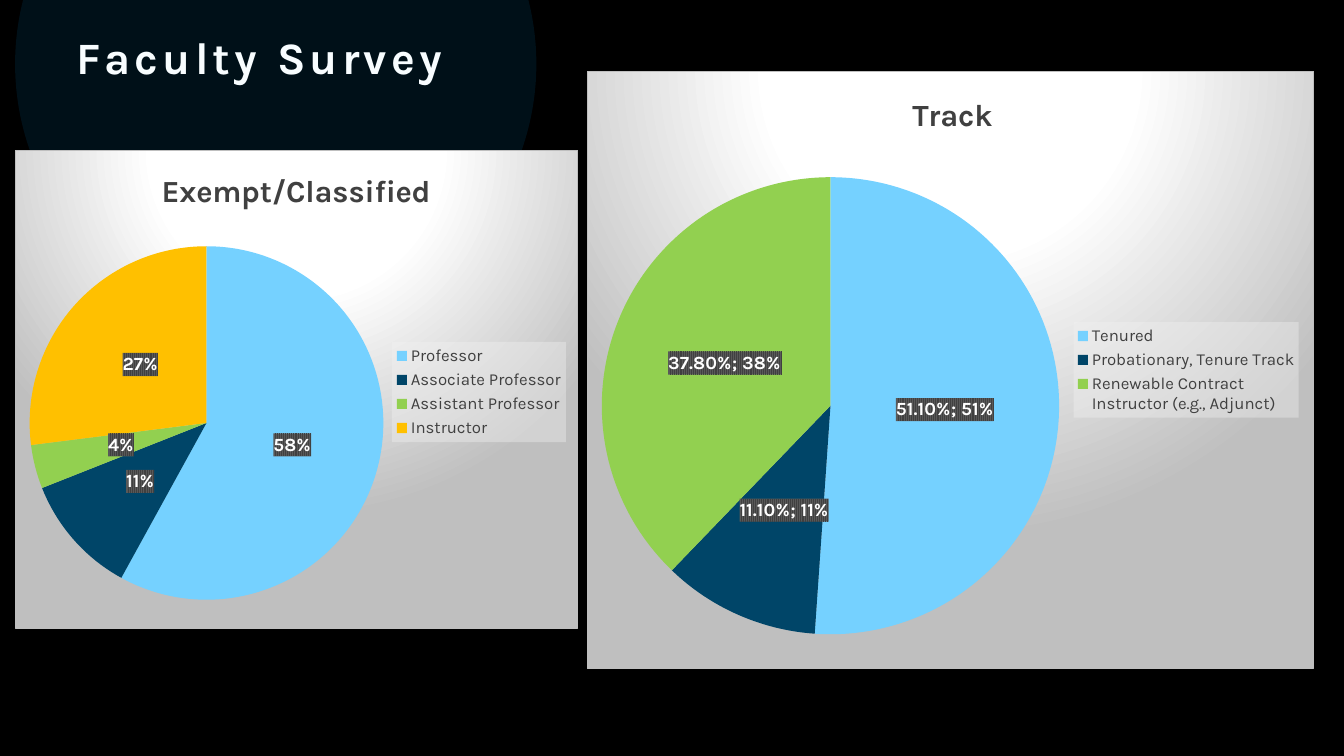
"""Build the Faculty Survey slide with two pie charts."""
from lxml import etree
from pptx import Presentation
from pptx.chart.data import CategoryChartData
from pptx.dml.color import RGBColor
from pptx.enum.chart import XL_CHART_TYPE, XL_LABEL_POSITION, XL_LEGEND_POSITION
from pptx.enum.shapes import MSO_SHAPE
from pptx.enum.text import PP_ALIGN
from pptx.oxml import parse_xml
from pptx.oxml.ns import nsdecls, qn
from pptx.util import Inches, Pt

BLACK = RGBColor(0x00, 0x00, 0x00)
NAVY = RGBColor(0x00, 0x22, 0x34)
ICE = RGBColor(0xF8, 0xFD, 0xFF)
WHITE = RGBColor(0xFF, 0xFF, 0xFF)
GRAY = RGBColor(0x40, 0x40, 0x40)
SLICES = [RGBColor(0x75, 0xD1, 0xFF), RGBColor(0x00, 0x45, 0x68),
          RGBColor(0x92, 0xD0, 0x50), RGBColor(0xFF, 0xC0, 0x00)]

HEADING = {"name": "Karla", "size": Pt(32), "bold": True}
CHART_TITLE = {"name": "Karla", "size": Pt(22), "bold": True}
LEGEND = {"name": "Karla", "size": Pt(12), "bold": False}
LABEL = {"name": "Karla", "size": Pt(13.3), "bold": True}

PANEL = """<a:gradFill><a:gsLst>
<a:gs pos="0"><a:srgbClr val="FFFFFF"/></a:gs>
<a:gs pos="39000"><a:srgbClr val="FFFFFF"/></a:gs>
<a:gs pos="100000"><a:srgbClr val="BFBFBF"/></a:gs></a:gsLst>
<a:path path="circle"><a:fillToRect l="50000" t="-80000" r="50000" b="180000"/></a:path>
</a:gradFill><a:ln w="9525"><a:solidFill><a:srgbClr val="BFBFBF"/></a:solidFill></a:ln>"""
LEGEND_BACK = """<a:solidFill><a:srgbClr val="F2F2F2"><a:alpha val="39000"/></a:srgbClr>
</a:solidFill>"""
LABEL_BACK = """<a:pattFill prst="narVert"><a:fgClr><a:srgbClr val="404040"/></a:fgClr>
<a:bgClr><a:srgbClr val="595959"/></a:bgClr></a:pattFill>"""


def set_font(font, formats, color):
    """Apply a dict of formats and a colour to a font."""
    for name, value in formats.items():
        setattr(font, name, value)
    font.color.rgb = color


def shape_props(content):
    """Return a chart spPr element with the given content."""
    return parse_xml(f"<c:spPr {nsdecls('c', 'a')}>{content}</c:spPr>")


def manual_layout(fractions, target=None):
    """Return a layout element that places a chart part by fractions."""
    layout = parse_xml(f"<c:layout {nsdecls('c')}><c:manualLayout/></c:layout>")
    tags = {"layoutTarget": target} if target else {}
    tags.update(xMode="edge", yMode="edge", **fractions)
    for tag, value in tags.items():
        etree.SubElement(layout[0], qn(f"c:{tag}")).set("val", str(value))
    return layout


def place(parent, anchor, layout):
    """Put a layout after the anchor tag, or first when there is none."""
    for old in parent.findall(qn("c:layout")):
        parent.remove(old)
    if anchor:
        parent.find(qn(anchor)).addnext(layout)
    else:
        parent.insert(0, layout)


def add_heading(slide, left, top, width, height):
    """Add the faded circle and the slide heading in its box."""
    size = Inches(5.17)
    sp = slide.shapes.add_shape(MSO_SHAPE.OVAL, left + Inches(0.32),
                                top - Inches(2.26), size, size)
    sp.shadow.inherit = False
    sp.fill.solid()
    sp.fill.fore_color.rgb = NAVY
    sp.line.fill.background()
    color = sp.fill._xPr.find(qn("a:solidFill"))[0]
    etree.SubElement(color, qn("a:alpha")).set("val", "48000")

    tf = slide.shapes.add_textbox(left, top, width, height).text_frame
    tf.word_wrap = True
    p = tf.paragraphs[0]
    p.alignment = PP_ALIGN.CENTER
    p.line_spacing = 0.9
    r = p.add_run()
    r.text = "Faculty Survey"
    set_font(r.font, HEADING, ICE)
    r.font._element.set("spc", "300")


def add_pie(slide, box, title, values, number_format, show_value, layouts):
    """Add a titled pie chart with legend and labels in its box."""
    data = CategoryChartData(number_format=number_format)
    data.categories = list(values)
    data.add_series("Series 1", list(values.values()))
    chart = slide.shapes.add_chart(XL_CHART_TYPE.PIE, *map(Inches, box), data).chart
    set_font(chart.font, {"name": "Karla", "size": Pt(10)}, WHITE)
    space = chart._chartSpace
    space.find(qn("c:chart")).addnext(shape_props(PANEL))

    chart.has_title = True
    p = chart.chart_title.text_frame.paragraphs[0]
    r = p.add_run()
    r.text = title
    set_font(r.font, CHART_TITLE, GRAY)
    place(chart.chart_title._element, "c:tx", manual_layout(layouts["title"]))
    place(space.chart.plotArea, None, manual_layout(layouts["pie"], "inner"))

    chart.has_legend = True
    legend = chart.legend
    legend.position = XL_LEGEND_POSITION.RIGHT
    legend.include_in_layout = False
    set_font(legend.font, LEGEND, GRAY)
    place(legend._element, "c:legendPos", manual_layout(layouts["legend"]))
    legend._element.find(qn("c:txPr")).addprevious(shape_props(LEGEND_BACK))

    series = chart.plots[0].series[0]
    for i, color in enumerate(SLICES[:len(values)]):
        fill = series.points[i].format.fill
        fill.solid()
        fill.fore_color.rgb = color

    labels = series.data_labels
    formats = {"show_percentage": True, "show_value": show_value,
               "number_format": number_format, "number_format_is_linked": show_value,
               "position": XL_LABEL_POSITION.CENTER}
    for name, value in formats.items():
        setattr(labels, name, value)
    set_font(labels.font, LABEL, WHITE)
    labels._element.find(qn("c:txPr")).addprevious(shape_props(LABEL_BACK))
    separator = parse_xml(f"<c:separator {nsdecls('c')}>; </c:separator>")
    labels._element.find(qn("c:showBubbleSize")).addnext(separator)


def main():
    """Build and save the slide."""
    prs = Presentation()
    prs.slide_width, prs.slide_height = Inches(13.33), Inches(7.5)
    s = prs.slides.add_slide(prs.slide_layouts[6])
    s.background.fill.solid()
    s.background.fill.fore_color.rgb = BLACK
    add_heading(s, *map(Inches, (-0.17, 0.31, 5.49, 0.59)))
    add_pie(s, (5.82, 0.7, 7.21, 5.94), "Track",
            {"Tenured": 0.511, "Probationary, Tenure Track": 0.111,
             "Renewable Contract Instructor (e.g., Adjunct)": 0.378},
            "0.00%", True,
            {"title": {"x": 0.44, "y": 0.03},
             "pie": {"x": 0.02, "y": 0.17, "w": 0.63, "h": 0.78},
             "legend": {"x": 0.67, "y": 0.42, "w": 0.31, "h": 0.16}})
    add_pie(s, (0.15, 1.49, 5.58, 4.75), "Exempt/Classified",
            {"Professor": 58, "Associate Professor": 11,
             "Assistant Professor": 4, "Instructor": 27},
            "0%", False,
            {"title": {"x": 0.25, "y": 0.03},
             "pie": {"x": 0.02, "y": 0.2, "w": 0.64, "h": 0.74},
             "legend": {"x": 0.67, "y": 0.4, "w": 0.31, "h": 0.21}})
    prs.save("out.pptx")


if __name__ == "__main__":
    main()
